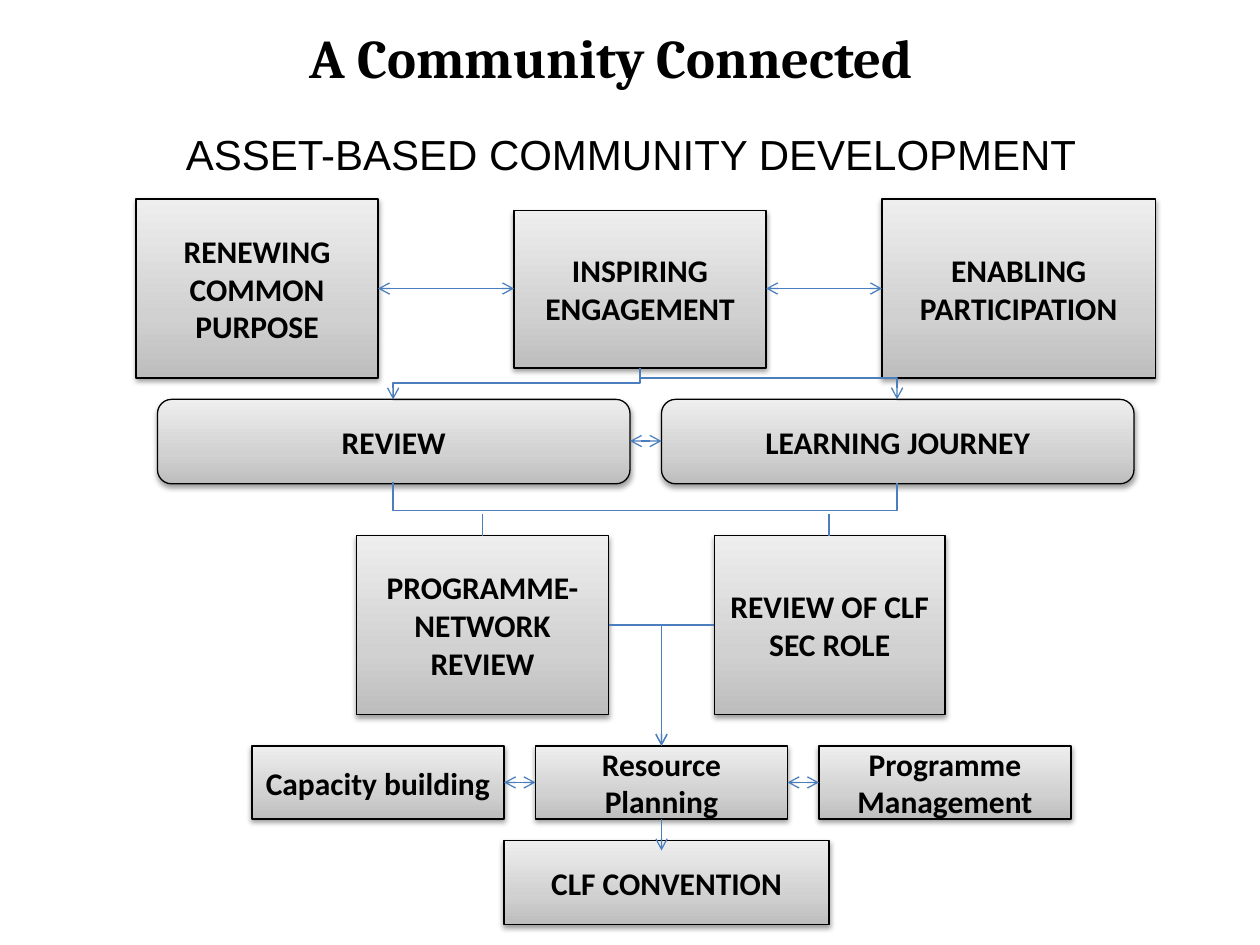
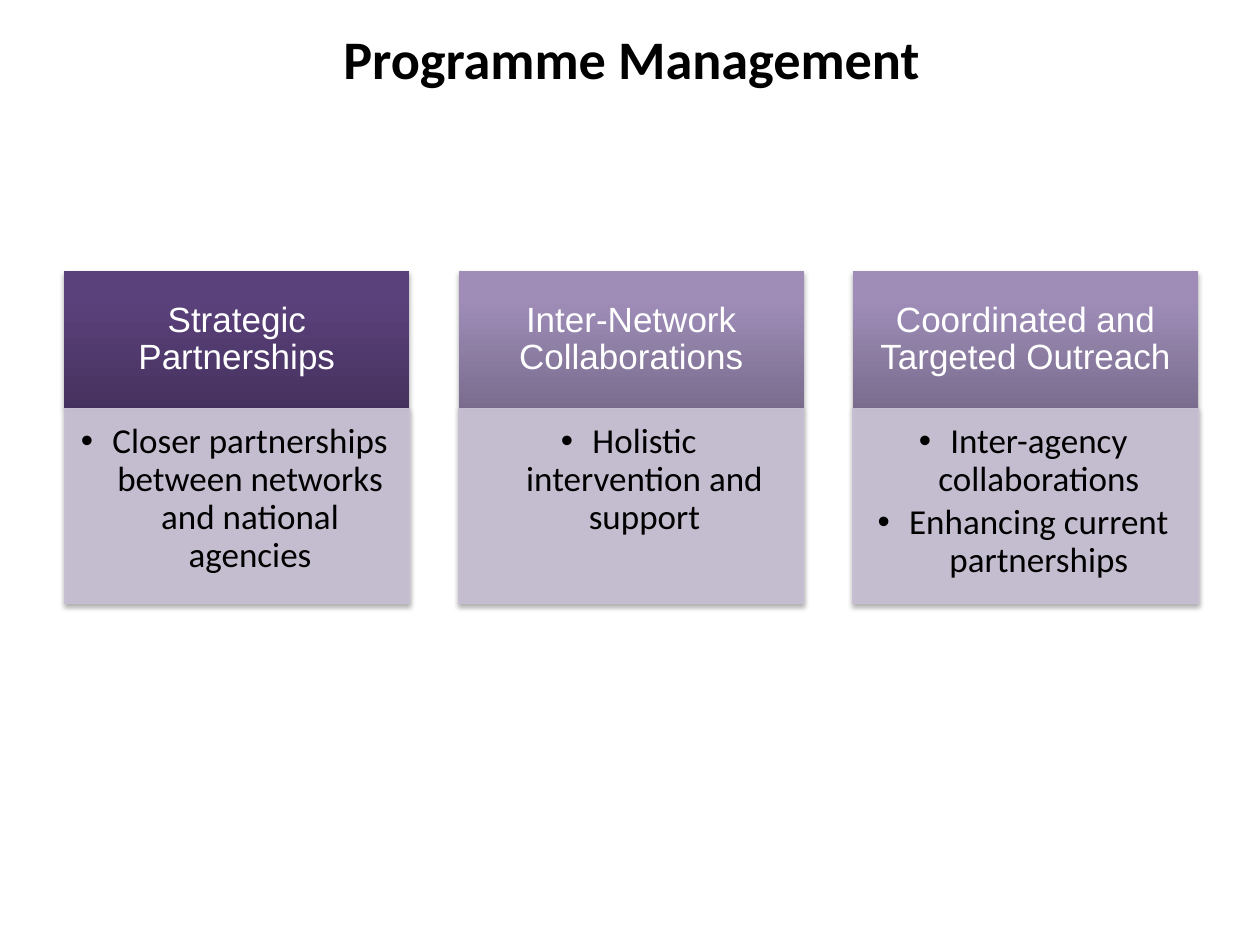
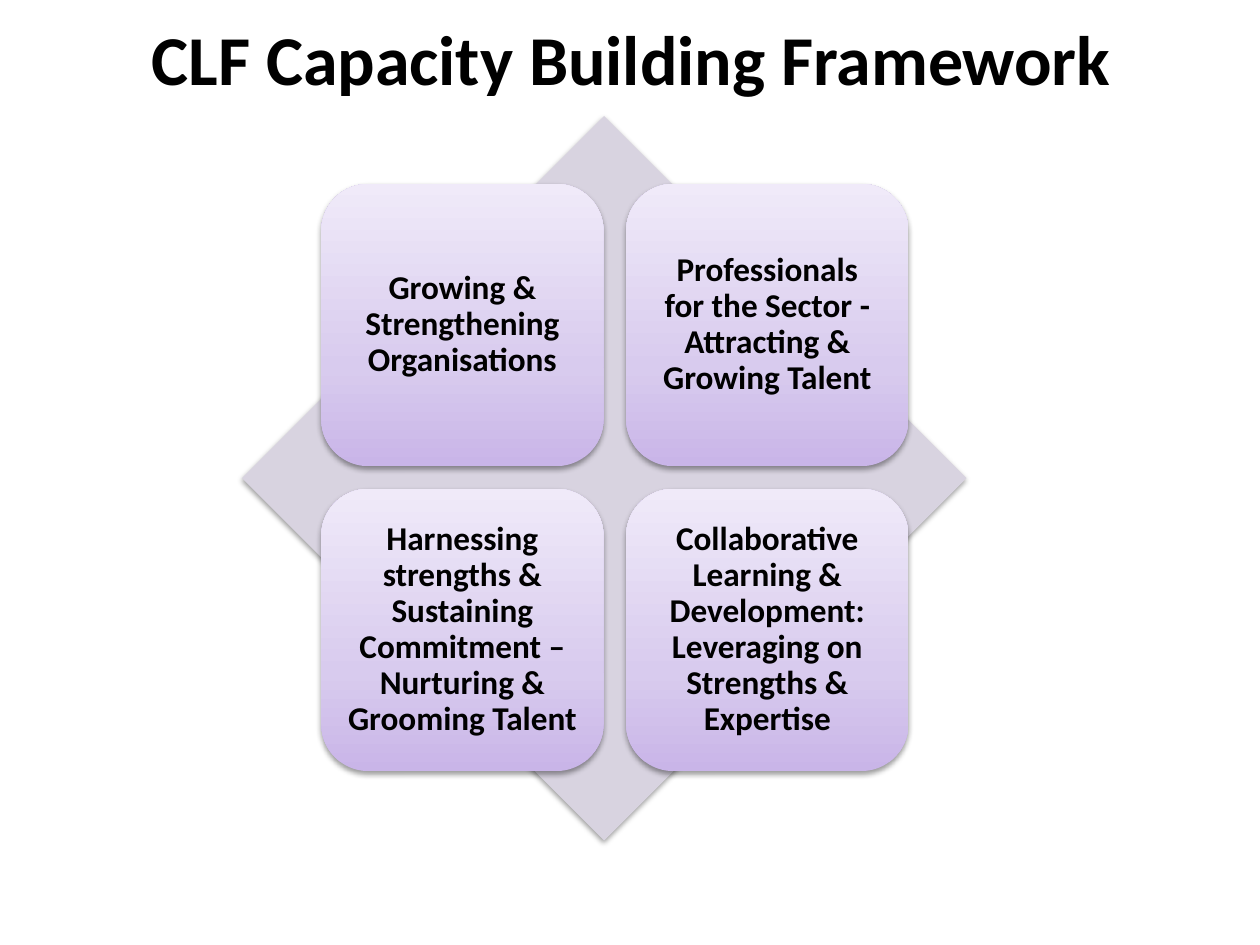
from dataclasses import dataclass

import lxml.etree
import pptx
import pptx.dml.color
import pptx.enum.shapes
import pptx.enum.text
import pptx.oxml.ns
import pptx.util

Inches, Pt = pptx.util.Inches, pptx.util.Pt
SHAPE = pptx.enum.shapes.MSO_SHAPE
CONNECTOR = pptx.enum.shapes.MSO_CONNECTOR
ANCHOR = pptx.enum.text.MSO_ANCHOR
qn = pptx.oxml.ns.qn
TITLE_ONLY = 5


@dataclass(frozen=True)
class Theme:
    # Colours
    ink: str = "000000"
    paper: str = "FFFFFF"
    arrow: str = "4B7EBC"
    card: str = "C7BFD3"
    diamond: str = "D8D3E0"
    # Gradient stops, from bottom to top
    grey: tuple = ((0, "BDBDBD"), (35, "D1D1D1"), (100, "EEEEEE"))
    dark_violet: tuple = ((0, "46325F"), (80, "5B417B"), (100, "5B407C"))
    violet: tuple = ((0, "7A6D8E"), (80, "9F8DB8"), (100, "9F8DBA"))
    lilac: tuple = ((0, "C9B5E8"), (35, "D8CBEE"), (100, "F0EAF9"))
    # Type
    sans: str = "Calibri"
    plain: str = "Arial"
    serif: str = "Cambria"
    title: float = 31
    big_title: float = 40
    subtitle: float = 24
    card_text: float = 20
    tile_text: float = 19
    box_text: float = 18
    line: float = 0.75


def rgb(value):
    return pptx.dml.color.RGBColor.from_string(value)


def add_xml(parent, tag, **attrs):
    child = lxml.etree.SubElement(parent, qn(tag))
    for name, value in attrs.items():
        child.set(name, str(value))
    return child


def write(sp, *paragraphs, size, font="Calibri", color="000000", bold=False,
          anchor=ANCHOR.MIDDLE, insets=(0.1, 0.05, 0.1, 0.05), spacing=None,
          after=None, bullet=False):
    """Fill a shape with centred paragraphs."""
    tf = sp.text_frame
    tf.word_wrap = True
    tf.auto_size = pptx.enum.text.MSO_AUTO_SIZE.NONE
    tf.vertical_anchor = anchor
    (tf.margin_left, tf.margin_top,
     tf.margin_right, tf.margin_bottom) = map(Inches, insets)
    for i, text in enumerate(paragraphs):
        p = tf.add_paragraph() if i else tf.paragraphs[0]
        p.text = text
        p.alignment = pptx.enum.text.PP_ALIGN.CENTER
        p.line_spacing = spacing
        if after:
            p.space_after = Pt(after)
        if bullet:
            pPr = p._p.get_or_add_pPr()
            pPr.set("marL", str(Inches(0.25)))
            pPr.set("indent", str(Inches(-0.25)))
            add_xml(pPr, "a:buFont", typeface="Arial")
            add_xml(pPr, "a:buChar", char="•")
        for r in p.runs:
            r.font.name, r.font.size, r.font.bold = font, Pt(size), bold
            r.font.color.rgb = rgb(color)


class Deck:
    """Holds the style and the current slide."""

    def __init__(self, theme):
        self.theme = theme
        self.prs = pptx.Presentation()
        self.prs.slide_width, self.prs.slide_height = Inches(10), Inches(7.5)
        self.slide = None

    def new_slide(self, title, size, left=0.43, width=9.16, height=0.92, font="Calibri"):
        self.slide = self.prs.slides.add_slide(self.prs.slide_layouts[TITLE_ONLY])
        sp = self.slide.shapes.title
        sp.left, sp.top, sp.width, sp.height = map(Inches, (left, 0, width, height))
        self.paint(sp, self.theme.paper, alpha=47)
        write(sp, title, size=size, font=font, bold=True)

    def paint(self, sp, fill, alpha=100):
        """Fill with one colour, or with gradient stops running upwards."""
        if isinstance(fill, str):
            sp.fill.solid()
            sp.fill.fore_color.rgb = rgb(fill)
            if alpha < 100:
                clr = sp.element.spPr.find(qn("a:solidFill"))[0]
                add_xml(clr, "a:alpha", val=alpha * 1000)
            return
        sp.fill.gradient()
        sp.fill.gradient_angle = 90
        stops = sp.element.spPr.find(qn("a:gradFill")).find(qn("a:gsLst"))
        stops.clear()
        for position, color in fill:
            gs = add_xml(stops, "a:gs", pos=position * 1000)
            add_xml(gs, "a:srgbClr", val=color)

    def shape(self, kind, x, y, w, h, fill, line=None, alpha=100, shade=38, distance=1.6):
        sp = self.slide.shapes.add_shape(kind, *map(Inches, (x, y, w, h)))
        self.paint(sp, fill, alpha)
        if line:
            sp.line.color.rgb = rgb(line)
            sp.line.width = Pt(self.theme.line)
        else:
            sp.line.fill.background()
        # Soft shadow below the shape
        sp.shadow.inherit = False
        effects = sp.element.spPr.find(qn("a:effectLst"))
        shadow = add_xml(effects, "a:outerShdw", blurRad=Pt(3.1), dist=Pt(distance),
                         dir=5400000, rotWithShape=0)
        add_xml(add_xml(shadow, "a:srgbClr", val=self.theme.ink), "a:alpha", val=shade * 1000)
        return sp

    def box(self, text, x, y, w, h, kind=SHAPE.FLOWCHART_PROCESS):
        sp = self.shape(kind, x, y, w, h, self.theme.grey, line=self.theme.ink)
        write(sp, text, size=self.theme.box_text, bold=True)

    def text(self, text, x, y, w, h, **fmt):
        write(self.slide.shapes.add_textbox(*map(Inches, (x, y, w, h))), text, **fmt)

    def line(self, x1, y1, x2, y2, ends="", kind=CONNECTOR.STRAIGHT):
        """Draw a connector; ends names the arrowheads: head, tail or both."""
        cn = self.slide.shapes.add_connector(kind, *map(Inches, (x1, y1, x2, y2)))
        cn.line.color.rgb = rgb(self.theme.arrow)
        cn.line.width = Pt(self.theme.line)
        spPr = cn.element.spPr
        for end in ends.split():
            add_xml(spPr.find(qn("a:ln")), f"a:{end}End", type="arrow")
        add_xml(spPr, "a:effectLst")
        return cn

    def corner(self, x1, y1, x2, y2):
        """Run sideways, then down to an arrowhead."""
        cn = self.line(x1, y1, x2, y2, "tail", CONNECTOR.ELBOW)
        cn.element.spPr.find(qn("a:prstGeom")).set("prst", "bentConnector2")

    def step(self, x1, y1, x2, y2, drop, ends=""):
        """Run down by drop, sideways, then to the end: an elbow turned by 90 degrees."""
        depth = max(y2 - y1, 0.01)
        mid_x, mid_y = (x1 + x2) / 2, (y1 + y2) / 2
        half = (x1 - x2) / 2
        cn = self.line(mid_x - depth / 2, mid_y - half, mid_x + depth / 2, mid_y + half,
                       ends, CONNECTOR.ELBOW)
        spPr = cn.element.spPr
        spPr.find(qn("a:xfrm")).set("rot", "5400000")
        guides = spPr.find(qn("a:prstGeom")).find(qn("a:avLst"))
        add_xml(guides, "a:gd", name="adj1", fmla=f"val {round(drop / depth * 100000)}")


def community_slide(deck):
    t = deck.theme
    deck.new_slide("A Community Connected", 31.2, 0.35, 9, 0.9, t.serif)
    deck.text("ASSET-BASED COMMUNITY DEVELOPMENT", 0.51, 0.92, 9, 6.33, size=t.subtitle,
              font=t.plain, anchor=ANCHOR.TOP, insets=(0.1, 0.1, 0.1, 0.05))

    # Goals, reviews and outcome
    deck.box("RENEWING COMMON PURPOSE", 1.08, 1.58, 1.92, 1.42)
    deck.box("INSPIRING ENGAGEMENT", 4.08, 1.67, 2, 1.25)
    deck.box("ENABLING PARTICIPATION", 7, 1.58, 2.17, 1.42)
    deck.box("PROGRAMME-NETWORK REVIEW", 2.83, 4.25, 2, 1.42)
    deck.box("REVIEW OF CLF SEC ROLE", 5.67, 4.25, 1.83, 1.42)
    deck.box("CLF CONVENTION", 4, 6.67, 2.58, 0.67)
    for i, name in enumerate(("REVIEW", "LEARNING JOURNEY")):
        deck.box(name, 1.25 + 4 * i, 3.17, 3.75, 0.67, SHAPE.ROUNDED_RECTANGLE)
    for i, name in enumerate(("Capacity building", "Resource Planning",
                              "Programme Management")):
        deck.box(name, 2 + 2.25 * i, 5.92, 2, 0.58)

    # Two-way links between neighbours
    for x1, x2, y in ((3, 4.08, 2.29), (6.08, 7, 2.29), (5, 5.25, 3.5),
                      (4, 4.25, 6.21), (6.25, 6.5, 6.21)):
        deck.line(x1, y, x2, y, "head tail")

    # Flow from row to row
    deck.step(5.08, 2.92, 3.12, 3.17, 0.12, "tail")
    deck.corner(5.08, 3, 7.12, 3.17)
    deck.step(3.12, 3.83, 7.12, 3.83, 0.23)
    for x in (3.83, 6.58):
        deck.line(x, 4.08, x, 4.25)
    for x in (4.83, 5.67):
        deck.corner(x, 4.96, 5.25, 5.92)
    deck.line(5.25, 6.5, 5.25, 6.75, "tail")


def management_slide(deck):
    t = deck.theme
    deck.new_slide("Programme Management", t.title)
    columns = (
        ("Strategic Partnerships", t.dark_violet,
         ["Closer partnerships between networks and national agencies"]),
        ("Inter-Network Collaborations", t.violet,
         ["Holistic intervention and support"]),
        ("Coordinated and Targeted Outreach", t.violet,
         ["Inter-agency collaborations", "Enhancing current partnerships"]),
    )
    for i, (heading, fill, points) in enumerate(columns):
        x = 0.51 + 3.13 * i
        head = deck.shape(SHAPE.RECTANGLE, x, 2.15, 2.74, 1.09, fill, shade=35, distance=1.8)
        write(head, heading, size=t.card_text, font=t.plain, color=t.paper,
              insets=(0.16, 0.09, 0.16, 0.09), spacing=0.9)
        body = deck.shape(SHAPE.RECTANGLE, x, 3.24, 2.74, 1.55, t.card, line=t.card,
                          alpha=90, shade=35, distance=1.8)
        write(body, *points, size=t.card_text, anchor=ANCHOR.TOP,
              insets=(0.12, 0.12, 0.16, 0.17), spacing=0.9, after=3, bullet=True)


def framework_slide(deck):
    t = deck.theme
    deck.new_slide("CLF Capacity Building Framework", t.big_title)
    deck.shape(SHAPE.DIAMOND, 1.92, 0.92, 5.75, 5.75, t.diamond)
    tiles = (
        "Growing & Strengthening Organisations",
        "Professionals\vfor the Sector - Attracting & Growing Talent",
        "Harnessing strengths & Sustaining Commitment – Nurturing & Grooming Talent",
        "Collaborative Learning & Development: Leveraging on Strengths & Expertise",
    )
    for i, text in enumerate(tiles):
        row, col = divmod(i, 2)
        sp = deck.shape(SHAPE.ROUNDED_RECTANGLE, 2.55 + 2.42 * col, 1.46 + 2.42 * row,
                        2.24, 2.24, t.lilac)
        write(sp, text, size=t.tile_text, bold=True, insets=(0.08,) * 4, spacing=0.9)


def main():
    deck = Deck(Theme())
    community_slide(deck)
    management_slide(deck)
    framework_slide(deck)
    deck.prs.save("out.pptx")


if __name__ == "__main__":
    main()
